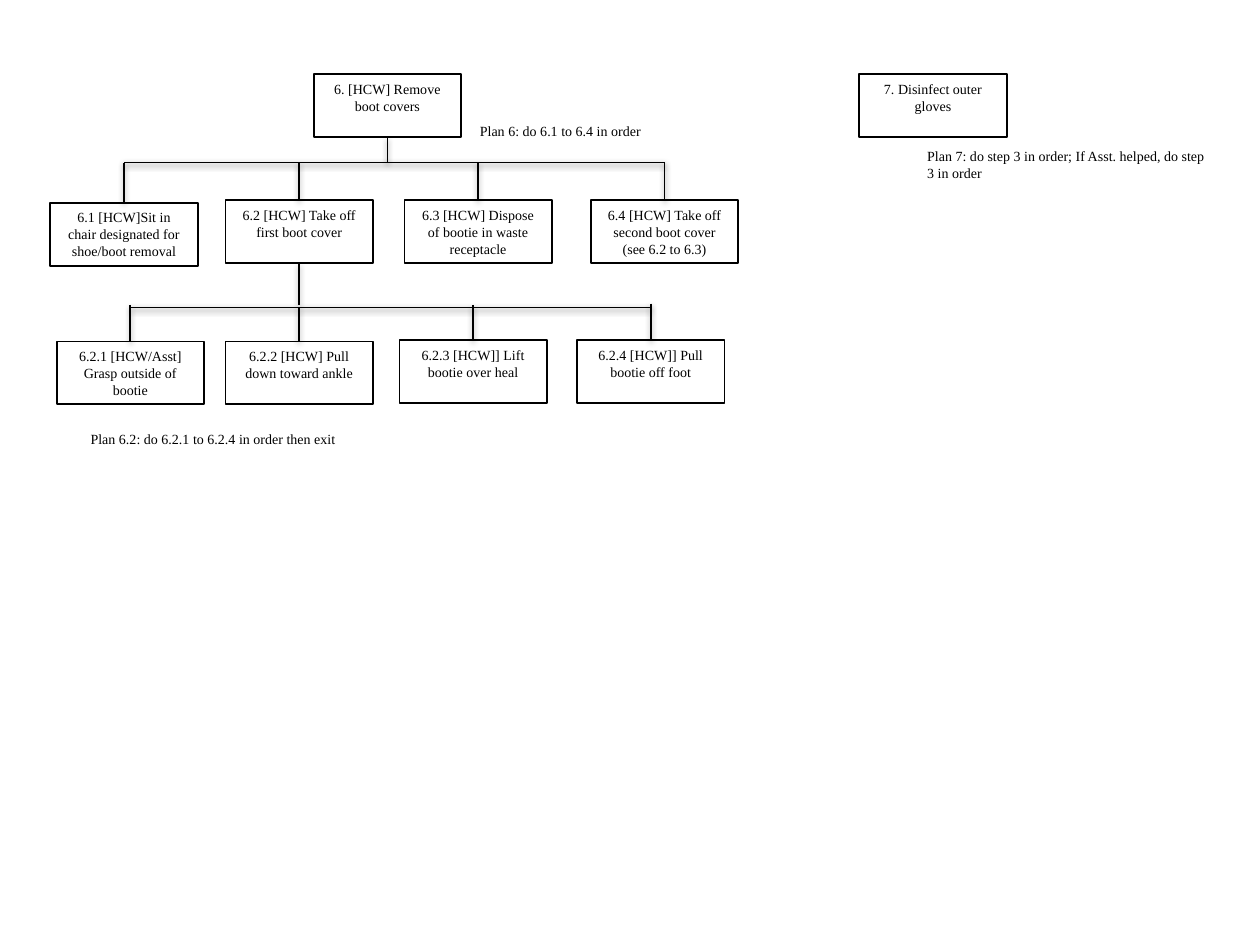
from dataclasses import dataclass
from lxml import etree
from pptx import Presentation
from pptx import util as u
from pptx.dml.color import RGBColor
from pptx.enum import shapes, text
from pptx.oxml import ns


@dataclass(frozen=True)
class Theme:
    font: str = "Times New Roman"
    size: float = 8
    ink: str = "000000"
    paper: str = "FFFFFF"
    line: float = 1
    shadow_blur: float = 3.15
    shadow_offset: float = 1.57
    shadow_alpha: int = 38000


THEME = Theme()
COLUMNS, ROWS = 100, 75
BOX_WIDTH, BOX_HEIGHT = 11.7, 5

ROOTS = [
    ("6", "6. [HCW] Remove boot covers", 24.9, 5.9),
    ("7", "7. Disinfect outer gloves", 68.2, 5.9),
]
BRANCHES = [
    dict(parent="6", stem_end=12.9, rail=12.9, children=[
        ("6.1", "6.1 [HCW]Sit in chair designated for shoe/boot removal", 4, 16.1, 12.9),
        ("6.2", "6.2 [HCW] Take off first boot cover", 17.9, 15.9, 12.9),
        ("6.3", "6.3 [HCW] Dispose of bootie in waste receptacle", 32.1, 15.9, 12.9),
        ("6.4", "6.4 [HCW] Take off second boot cover (see 6.2 to 6.3)", 46.9, 15.9, 12.9),
    ]),
    dict(parent="6.2", stem_end=24.2, rail=24.4, children=[
        ("6.2.1", "6.2.1 [HCW/Asst] Grasp outside of bootie", 4.5, 27.1, 24.2),
        ("6.2.2", "6.2.2 [HCW] Pull down toward ankle", 17.9, 27.1, 24.4),
        ("6.2.3", "6.2.3 [HCW]] Lift bootie over heal", 31.7, 27, 24.2),
        ("6.2.4", "6.2.4 [HCW]] Pull bootie off foot", 45.8, 27, 24.1),
    ]),
]
PLANS = [
    ("Plan 7: do step 3 in order; If Asst. helped, do step 3 in order", 72.6, 11.2, 24.5, 3.7),
    ("Plan 6: do 6.1 to 6.4 in order", 37.1, 9.2, 25.2, 2.4),
    ("Plan 6.2: do 6.2.1 to 6.2.4 in order then exit", 6.2, 33.7, 25.2, 2.4),
]

deck = Presentation()
deck.slide_width, deck.slide_height = u.Inches(10), u.Inches(7.5)
page = deck.slides.add_slide(deck.slide_layouts[6])


def across(columns):
    return round(deck.slide_width * columns / COLUMNS)


def down(rows):
    return round(deck.slide_height * rows / ROWS)


def write(shape, words, align=text.PP_ALIGN.LEFT):
    frame = shape.text_frame
    frame.word_wrap = True
    frame.vertical_anchor = text.MSO_ANCHOR.TOP
    para = frame.paragraphs[0]
    para.alignment = align
    span = para.add_run()
    span.text = words
    span.font.name = THEME.font
    span.font.size = u.Pt(THEME.size)
    span.font.color.rgb = RGBColor.from_string(THEME.ink)


def outline(shape):
    shape.line.color.rgb = RGBColor.from_string(THEME.ink)
    shape.line.width = u.Pt(THEME.line)


def add_box(words, left, top):
    box = page.shapes.add_shape(
        shapes.MSO_SHAPE.RECTANGLE,
        across(left), down(top), across(BOX_WIDTH), down(BOX_HEIGHT))
    box.shadow.inherit = False
    box.fill.solid()
    box.fill.fore_color.rgb = RGBColor.from_string(THEME.paper)
    outline(box)
    write(box, words, align=text.PP_ALIGN.CENTER)
    return box


def add_line(start, end):
    line = page.shapes.add_connector(shapes.MSO_CONNECTOR.STRAIGHT, *start, *end)
    outline(line)
    effects = etree.SubElement(line._element.spPr, ns.qn("a:effectLst"))
    shadow = etree.SubElement(
        effects, ns.qn("a:outerShdw"), blurRad=str(u.Pt(THEME.shadow_blur)),
        dist=str(u.Pt(THEME.shadow_offset)), dir="5400000", rotWithShape="0")
    color = etree.SubElement(shadow, ns.qn("a:srgbClr"), val=THEME.ink)
    etree.SubElement(color, ns.qn("a:alpha"), val=str(THEME.shadow_alpha))
    return line


def center(box):
    return box.left + box.width // 2


boxes = {key: add_box(words, left, top) for key, words, left, top in ROOTS}
for branch in BRANCHES:
    for key, words, left, top, _ in branch["children"]:
        boxes[key] = add_box(words, left, top)

for branch in BRANCHES:
    children = branch["children"]
    first, last = boxes[children[0][0]], boxes[children[-1][0]]
    rail = down(branch["rail"])
    add_line((center(first), rail), (center(last), rail))
    for key, _, _, _, start in children:
        child = boxes[key]
        drop = add_line((center(child), down(start)), (center(child), child.top))
        drop.end_connect(child, 0)
    parent = boxes[branch["parent"]]
    stem = add_line((center(parent), parent.top + parent.height),
                    (center(parent), down(branch["stem_end"])))
    stem.begin_connect(parent, 2)

for words, left, top, width, height in PLANS:
    write(page.shapes.add_textbox(across(left), down(top), across(width), down(height)), words)

deck.save("out.pptx")
